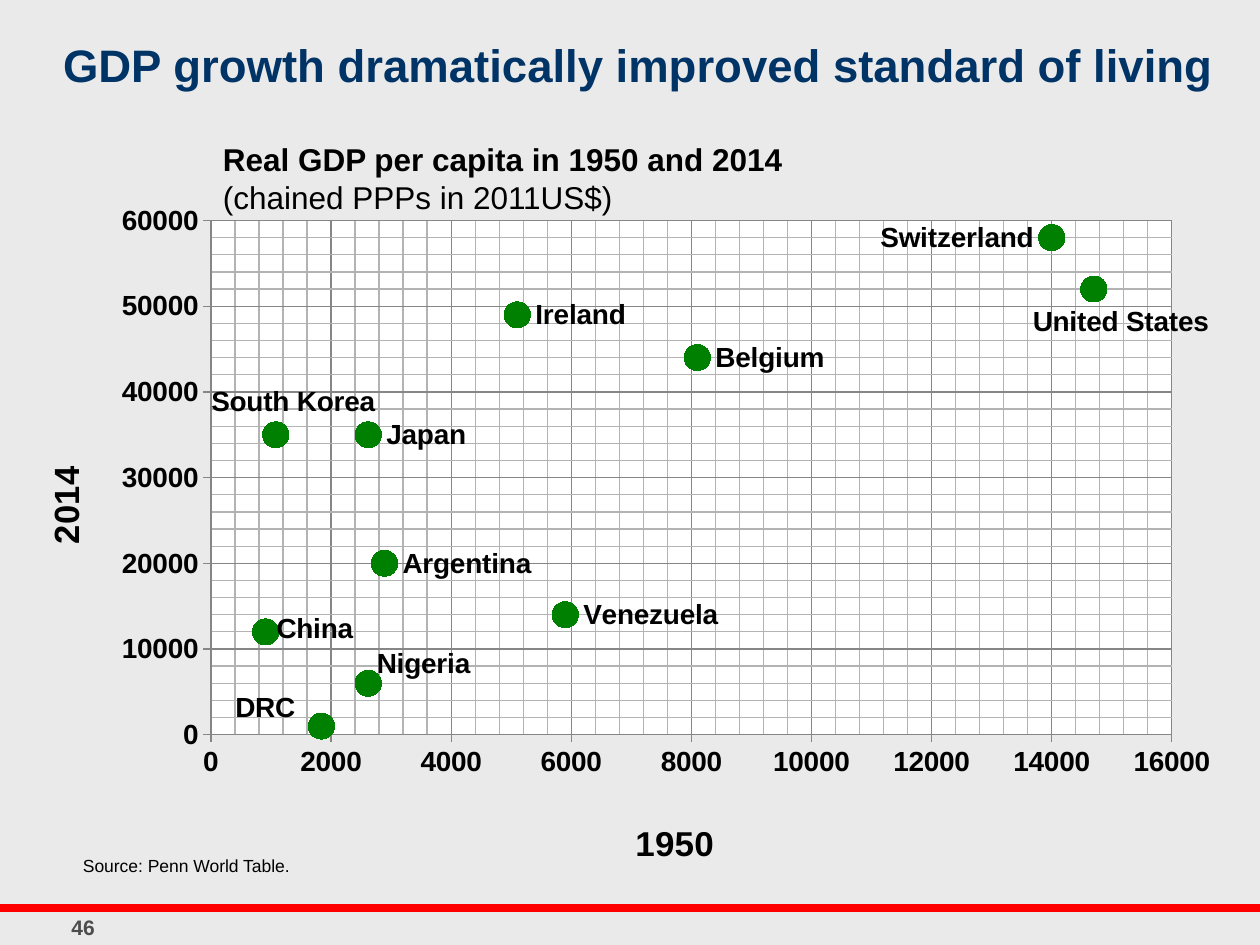
import pptx
import pptx.util
import pptx.chart.data
import pptx.dml.color
import pptx.enum.chart
import pptx.enum.shapes
import pptx.enum.text
import pptx.oxml
import pptx.oxml.ns

Pt = pptx.util.Pt
RGB = pptx.dml.color.RGBColor.from_string
MSO = pptx.enum.text.MSO_ANCHOR
POS = pptx.enum.chart.XL_LABEL_POSITION
NS = pptx.oxml.ns.nsdecls("c", "a")
qn = pptx.oxml.ns.qn

THEME = {
    "font": "Arial", "back": "EAEAEA", "title": "003366", "text": "000000",
    "rule": "FF0000", "number": "4D4D4D", "dot": "008000", "plot": "FFFFFF",
    "major": "868686", "minor": "B3B3B3",
    "title_pt": 26, "axis_pt": 20, "caption_pt": 18, "label_pt": 16,
    "number_pt": 12, "source_pt": 10,
}

prs = pptx.Presentation()
prs.slide_width, prs.slide_height = pptx.util.Inches(10), pptx.util.Inches(7.5)
col, row = prs.slide_width / 100, prs.slide_height / 75


def write(sp, at, lines, size, color, bold, anchor=MSO.TOP):
    sp.left, sp.top, sp.width, sp.height = (
        int(v * unit) for v, unit in zip(at, (col, row, col, row)))
    tf = sp.text_frame
    tf.text = "\n".join(lines)
    tf.word_wrap = True
    tf.auto_size = pptx.enum.text.MSO_AUTO_SIZE.NONE
    tf.vertical_anchor = anchor
    for p in tf.paragraphs:
        p.alignment = pptx.enum.text.PP_ALIGN.LEFT
        f = p.runs[0].font
        f.name, f.size, f.bold = THEME["font"], Pt(THEME[size]), bold
        f.color.rgb = RGB(THEME[color])
    return tf


def layout(percents, edge=False, inner=False):
    parts = '<c:layoutTarget val="inner"/>' if inner else ""
    if edge:
        parts += '<c:xMode val="edge"/><c:yMode val="edge"/>'
    for key, value in zip("xywh", percents):
        parts += f'<c:{key} val="{value / 100:.4f}"/>'
    return pptx.oxml.parse_xml(
        f"<c:layout {NS}><c:manualLayout>{parts}</c:manualLayout></c:layout>")


s = prs.slides.add_slide(prs.slide_layouts[5])
s.background.fill.solid()
s.background.fill.fore_color.rgb = RGB(THEME["back"])

rule = s.shapes.add_connector(pptx.enum.shapes.MSO_CONNECTOR.STRAIGHT,
                              0, int(72.1 * row), prs.slide_width, int(72.1 * row))
rule.line.color.rgb = RGB(THEME["rule"])
rule.line.width = Pt(4.5)
rule._element.spPr.append(pptx.oxml.parse_xml(f"<a:effectLst {NS}/>"))

write(s.shapes.title, (4, 0.9, 93.5, 8.4),
      ["GDP growth dramatically improved standard of living"],
      "title_pt", "title", True, MSO.MIDDLE)

countries = [
    ("Argentina", 2890, 20000, None),
    ("Belgium", 8100, 44000, None),
    ("Switzerland", 14000, 58000, None),
    ("China", 910, 12000, (-0.6, -0.5)),
    ("DRC", 1840, 1000, (-8.7, -2.8)),
    ("Ireland", 5100, 49000, None),
    ("Japan", 2620, 35000, None),
    ("South Korea", 1080, 35000, (-6.9, -4.9)),
    ("Nigeria", 2620, 6000, (-0.8, -3)),
    ("United States", 14700, 52000, (-6.6, 4.9)),
    ("Venezuela", 5900, 14000, None),
]
data = pptx.chart.data.XyChartData()
for name, x, y, shift in countries:
    data.add_series(name).add_data_point(x, y)
chart = s.shapes.add_chart(
    pptx.enum.chart.XL_CHART_TYPE.XY_SCATTER, int(2 * col), int(15.7 * row),
    int(95.1 * col), int(53.7 * row), data).chart
chart.has_legend = chart.has_title = False
chart.font.name, chart.font.size = THEME["font"], Pt(THEME["label_pt"])
chart.font.color.rgb = RGB(THEME["text"])
chart.plots[0].vary_by_categories = False

area = chart._chartSpace.find(qn("c:chart"))
area.addnext(pptx.oxml.parse_xml(
    f"<c:spPr {NS}><a:noFill/><a:ln><a:noFill/></a:ln></c:spPr>"))
plot_area = area.find(qn("c:plotArea"))
for old in plot_area.findall(qn("c:layout")):
    plot_area.remove(old)
plot_area.insert(0, layout((15.5, 3.4, 80.2, 77.1), True, True))
plot_area.append(pptx.oxml.parse_xml(
    f'<c:spPr {NS}><a:solidFill><a:srgbClr val="{THEME["plot"]}"/></a:solidFill></c:spPr>'))

axes = [
    (chart.category_axis, "1950", 16000, 2000, (50.4, 92.5)),
    (chart.value_axis, "2014", 60000, 10000, (1, 39.4)),
]
for axis, title, top, step, at in axes:
    axis.minimum_scale, axis.maximum_scale = 0, top
    axis.major_unit, axis.minor_unit = step, step / 5
    axis.has_major_gridlines = axis.has_minor_gridlines = True
    axis.major_tick_mark = pptx.enum.chart.XL_TICK_MARK.OUTSIDE
    axis.minor_tick_mark = pptx.enum.chart.XL_TICK_MARK.NONE
    axis.tick_labels.font.bold = True
    axis.tick_labels.font.size = Pt(THEME["label_pt"])
    axis.tick_labels.number_format = "General"
    axis.tick_labels.number_format_is_linked = False
    minor = axis._element.find(qn("c:minorGridlines"))
    minor.append(pptx.oxml.parse_xml(
        f'<c:spPr {NS}><a:ln w="9525"><a:solidFill><a:srgbClr val="{THEME["minor"]}"/>'
        "</a:solidFill></a:ln></c:spPr>"))
    for line in (axis.format.line, axis.major_gridlines.format.line):
        line.color.rgb = RGB(THEME["major"])
        line.width = Pt(0.75)
    tf = axis.axis_title.text_frame
    tf.text = title
    f = tf.paragraphs[0].runs[0].font
    f.name, f.size, f.bold = THEME["font"], Pt(THEME["axis_pt"]), True
    f.color.rgb = RGB(THEME["text"])
    head = axis._element.find(qn("c:title"))
    for old in head.findall(qn("c:layout")):
        head.remove(old)
    head.find(qn("c:tx")).addnext(layout(at, True))

for series, (name, x, y, shift) in zip(chart.plots[0].series, countries):
    series.format.line.fill.background()
    series.marker.style = pptx.enum.chart.XL_MARKER_STYLE.CIRCLE
    series.marker.size = 15
    series.marker.format.fill.solid()
    series.marker.format.fill.fore_color.rgb = RGB(THEME["dot"])
    series.marker.format.line.color.rgb = RGB(THEME["dot"])
    label = series.points[0].data_label
    label.font.name, label.font.size = THEME["font"], Pt(THEME["label_pt"])
    label.font.bold = True
    label.font.color.rgb = RGB(THEME["text"])
    label.position = POS.LEFT if name == "Switzerland" else POS.RIGHT
    tag = series._element.find(".//" + qn("c:dLbl"))
    tag.find(qn("c:showVal")).set("val", "0")
    tag.find(qn("c:showSerName")).set("val", "1")
    if shift:
        tag.find(qn("c:idx")).addnext(layout(shift))
    labels = series._element.find(qn("c:dLbls"))
    for leader in labels.findall(qn("c:showLeaderLines")):
        leader.set("val", "0")
    labels.append(pptx.oxml.parse_xml(
        f'<c:extLst {NS}><c:ext uri="{{CE6537A1-D6FC-4f65-9D91-7224C49458BB}}" '
        'xmlns:c15="http://schemas.microsoft.com/office/drawing/2012/chart">'
        '<c15:showLeaderLines val="0"/></c:ext></c:extLst>'))

tf = write(s.shapes.add_textbox(0, 0, 0, 0), (16.7, 10.6, 72.9, 7.1),
           ["Real GDP per capita in 1950 and 2014", "(chained PPPs in 2011US$)"],
           "caption_pt", "text", True)
tf.paragraphs[1].runs[0].font.bold = False
write(s.shapes.add_textbox(0, 0, 0, 0), (5.6, 67.4, 81, 2.7),
      ["Source: Penn World Table."], "source_pt", "text", False)
tf = write(s.shapes.add_textbox(0, 0, 0, 0), (2.2, 72.1, 8.8, 2.9),
           ["46"], "number_pt", "number", True, MSO.MIDDLE)
tf.paragraphs[0].alignment = pptx.enum.text.PP_ALIGN.CENTER

prs.save("out.pptx")
